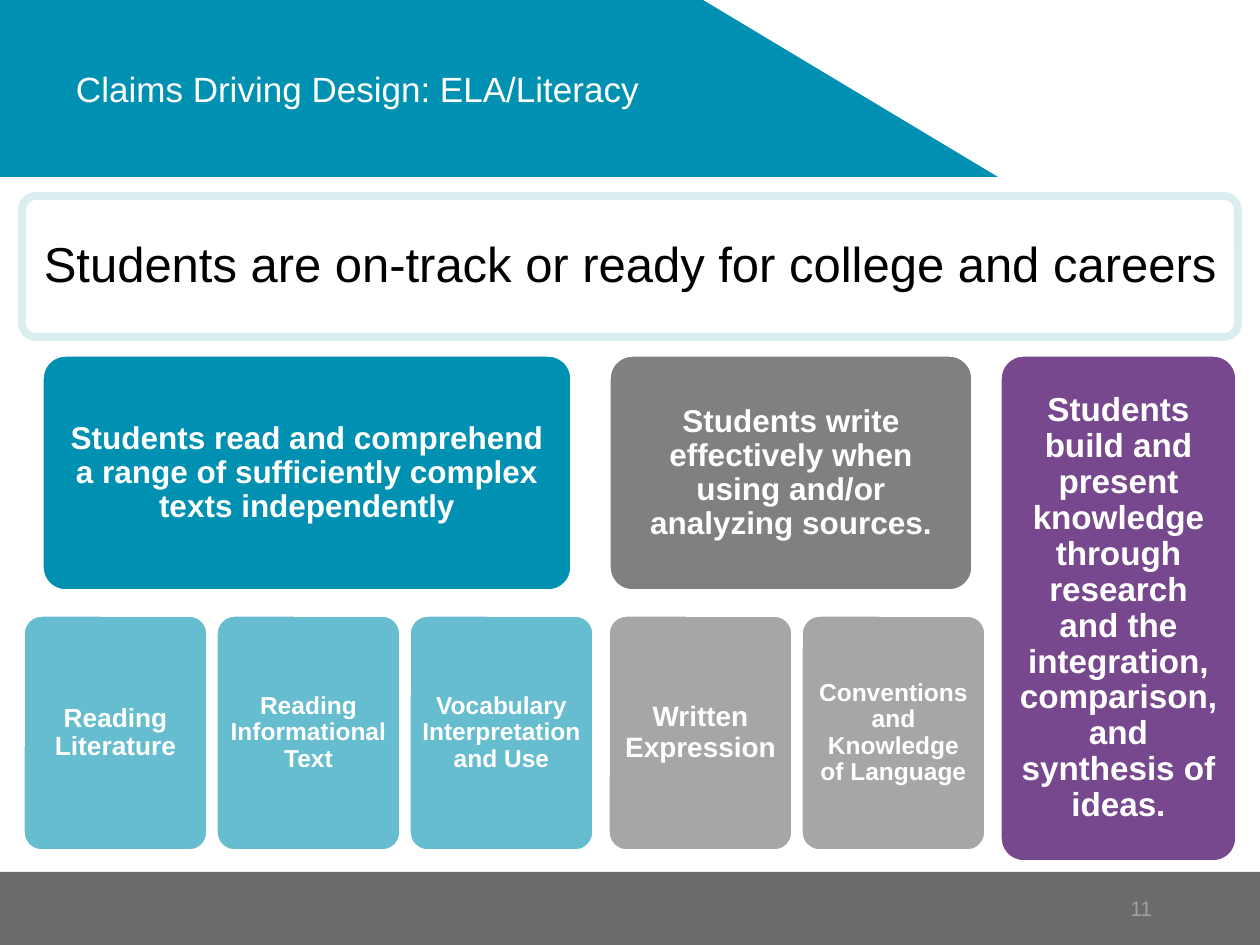
import pptx
import pptx.util
import pptx.oxml.ns
import pptx.dml.color
import pptx.enum.shapes
import pptx.enum.text
from lxml import etree

PX = 914400 / 126  # EMU per px
FONT = "Arial"
COLORS = {
    "teal": "0091B2", "mint": "DAEDEF", "gray": "808080", "silver": "A6A6A6",
    "purple": "78488E", "footer": "6B6B6B", "number": "9F9F9F",
    "white": "FFFFFF", "black": "000000",
}
ALIGN = pptx.enum.text.PP_ALIGN
SHAPES = pptx.enum.shapes.MSO_SHAPE

# Card grid
LEFT, PITCH, CARD_W, CARD_H = 23, 193, 185, 236
CLAIM_Y, CARD_Y = 355, 615


def emu(px):
    return pptx.util.Emu(round(px * PX))


def rgb(name):
    return pptx.dml.color.RGBColor.from_string(COLORS[name])


def paint(s, fill, line=None, width=2, alpha=None):
    s.shadow.inherit = False
    s.fill.solid()
    s.fill.fore_color.rgb = rgb(fill)
    if alpha:
        clr = s.fill._xPr.find(".//" + pptx.oxml.ns.qn("a:srgbClr"))
        etree.SubElement(clr, pptx.oxml.ns.qn("a:alpha"), val=str(alpha * 1000))
    if line:
        s.line.color.rgb = rgb(line)
        s.line.width = pptx.util.Pt(width)
    else:
        s.line.fill.background()


def write(s, text, size, color="white", bold=False, align=ALIGN.CENTER,
          margins=(7, 7, 7, 7), spacing=0.9):
    tf = s.text_frame
    left, top, right, bottom = map(emu, margins)
    frame = {"word_wrap": True, "vertical_anchor": pptx.enum.text.MSO_ANCHOR.MIDDLE,
             "margin_left": left, "margin_top": top,
             "margin_right": right, "margin_bottom": bottom}
    for name, value in frame.items():
        setattr(tf, name, value)
    p = tf.paragraphs[0]
    p.alignment = align
    p.line_spacing = spacing
    r = p.add_run()
    r.text = text
    for name, value in {"name": FONT, "size": pptx.util.Pt(size), "bold": bold}.items():
        setattr(r.font, name, value)
    r.font.color.rgb = rgb(color)


def add_label(slide, box, text, size, **style):
    s = slide.shapes.add_textbox(*map(emu, box))
    write(s, text, size, spacing=1.0, **style)


def add_card(slide, box, text, size, fill, alpha=None, inset=7):
    s = slide.shapes.add_shape(SHAPES.ROUNDED_RECTANGLE, *map(emu, box))
    s.adjustments[0] = 0.1
    paint(s, fill, "white", alpha=alpha)
    write(s, text, size, bold=True, margins=[inset] * 4)


def add_header(slide):
    builder = slide.shapes.build_freeform(0, 0, scale=PX)
    builder.add_line_segments([(703, 0), (998, 177), (0, 177)], close=True)
    paint(builder.convert_to_shape(), "teal")
    add_label(slide, (0, 0, 840, 177), "Claims Driving Design: ELA/Literacy", 20,
              align=ALIGN.LEFT, margins=(76, 6, 13, 6))


def add_goal(slide):
    s = slide.shapes.add_shape(SHAPES.ROUNDED_RECTANGLE, *map(emu, (22, 196, 1216, 141)))
    s.adjustments[0] = 0.1
    paint(s, "white", "mint", 4.5)
    write(s, "Students are on-track or ready for college and careers", 28,
          "black", margins=[13] * 4)


def add_footer(slide):
    s = slide.shapes.add_shape(SHAPES.RECTANGLE, *map(emu, (0, 872, 1260, 73)))
    paint(s, "footer")
    add_label(slide, (955, 872, 210, 73), "11", 12, color="number",
              align=ALIGN.RIGHT, margins=(13, 6, 13, 6))


def main():
    prs = pptx.Presentation()
    prs.slide_width, prs.slide_height = emu(1260), emu(945)
    slide = prs.slides.add_slide(prs.slide_layouts[6])
    add_header(slide)
    add_footer(slide)
    add_goal(slide)

    # Claims
    claims = [
        (42, 530, CARD_H, "Students read and comprehend a range of sufficiently "
         "complex texts independently", 18, "teal"),
        (609, 364, CARD_H, "Students write effectively when using and/or analyzing "
         "sources.", 18, "gray"),
        (1000, 237, 507, "Students build and present knowledge through research and "
         "the integration, comparison, and synthesis of ideas.", 19, "purple"),
    ]
    for x, w, h, text, size, fill in claims:
        add_card(slide, (x, CLAIM_Y, w, h), text, size, fill, inset=9)

    # Subclaims under the first two claims
    groups = [
        (LEFT, "teal", 60, [("Reading Literature", 15),
                            ("Reading Informational Text", 14),
                            ("Vocabulary Interpretation and Use", 14)]),
        (608, "silver", None, [("Written Expression", 16),
                               ("Conventions and Knowledge of Language", 14)]),
    ]
    for left, fill, alpha, cards in groups:
        for i, (text, size) in enumerate(cards):
            box = (left + i * PITCH, CARD_Y, CARD_W, CARD_H)
            add_card(slide, box, text, size, fill, alpha)

    prs.save("out.pptx")


if __name__ == "__main__":
    main()
